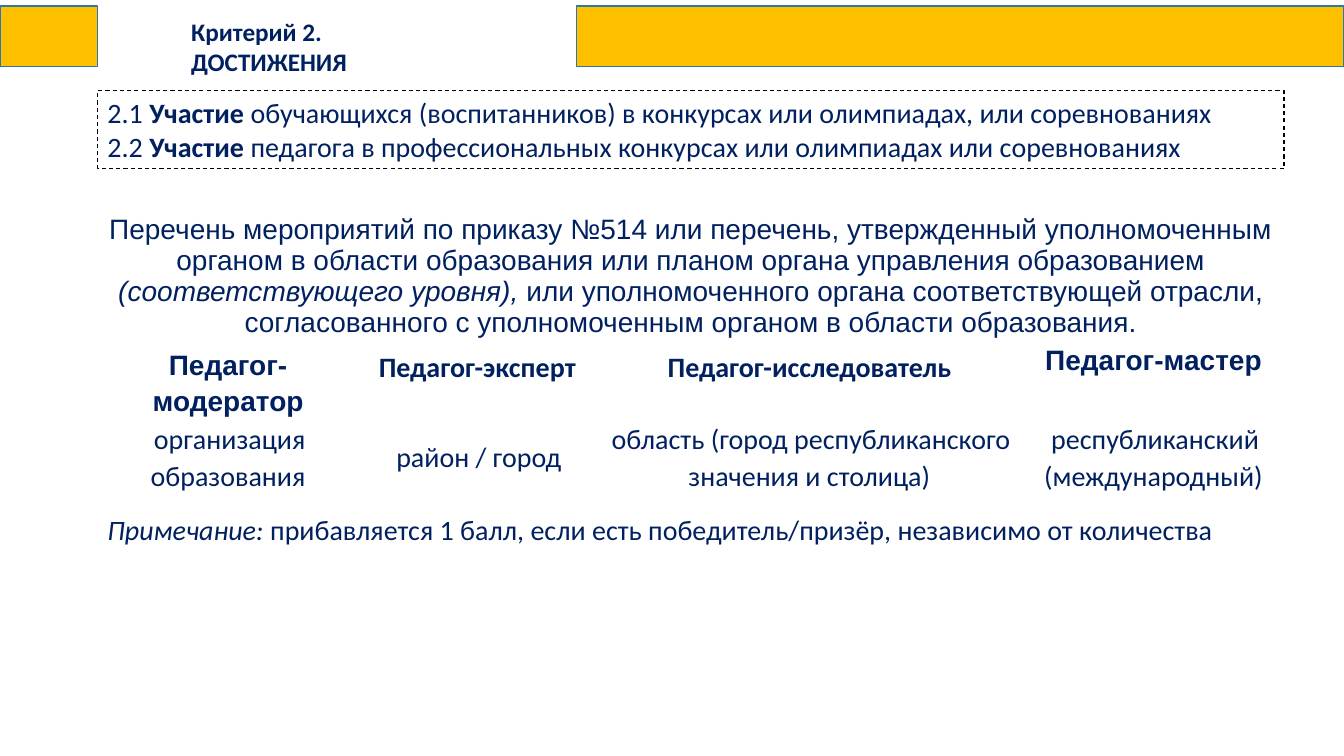
from pptx import Presentation
from pptx.dml.color import RGBColor
from pptx.enum.dml import MSO_LINE as Dash
from pptx.enum.shapes import MSO_SHAPE as Shape
from pptx.enum.text import MSO_ANCHOR as Anchor, MSO_AUTO_SIZE as Auto, PP_ALIGN as Align
from pptx.util import Cm, Pt

NAVY, GOLD, BLUE, BLACK = "002060", "FFC000", "2E75B5", "000000"
WIDE, HIGH = 33.87, 19.05
LEFT, SPAN = 2.46, 29.9
SIDES = ("left", "top", "right", "bottom")


def paint(color, code):
    color.rgb = RGBColor.from_string(code)


def apply(item, form):
    for key, value in form.items():
        setattr(item, key, value)


def write(par, runs, form, **layout):
    """Fill a paragraph with (text, extra font values) runs."""
    apply(par, layout)
    for text, extra in runs:
        run = par.add_run()
        run.text = text
        apply(run.font, {"name": "Calibri", "size": Pt(20), **form, **extra})
        paint(run.font.color, NAVY)


def inset(item, pads):
    apply(item, {f"margin_{side}": Cm(pad) for side, pad in zip(SIDES, pads)})


def add_rect(slide, box, line, width):
    rect = slide.shapes.add_shape(Shape.RECTANGLE, *map(Cm, box))
    rect.shadow.inherit = False
    rect.fill.background()
    paint(rect.line.color, line)
    rect.line.width = Pt(width)
    return rect


def add_text(slide, box, runs, form):
    frame = slide.shapes.add_textbox(*map(Cm, box)).text_frame
    frame.word_wrap = True
    write(frame.paragraphs[0], runs, form)
    return frame


def add_head(slide, box):
    """Title between two gold bars."""
    x, y, w, h = box
    add_text(slide, (x + 4.57, y + 0.13, 7.75, 1.02),
             [("Критерий 2. ДОСТИЖЕНИЯ", {})], {"size": Pt(18), "bold": True})
    for start, end in ((0, LEFT), (14.53, w)):
        bar = add_rect(slide, (x + start, y, end - start, h), BLUE, 1)
        bar.fill.solid()
        paint(bar.fill.fore_color, GOLD)


def add_goals(slide, box):
    rect = add_rect(slide, box, BLACK, 0.75)
    rect.line.dash_style = Dash.DASH
    frame = rect.text_frame
    frame.word_wrap = True
    frame.vertical_anchor = Anchor.TOP
    goals = (
        ("2.1 ", " обучающихся (воспитанников) в конкурсах или олимпиадах, или соревнованиях"),
        ("2.2 ", " педагога в профессиональных конкурсах или олимпиадах или соревнованиях"),
    )
    for i, (mark, rest) in enumerate(goals):
        par = frame.add_paragraph() if i else frame.paragraphs[0]
        write(par, [(mark, {}), ("Участие", {"bold": True}), (rest, {})], {},
              alignment=Align.JUSTIFY)


def add_levels(slide, box):
    """Table of event levels for each teacher grade."""
    grades = (
        ("Педагог-модератор", "Arial", 1.15, "организация образования"),
        ("Педагог-эксперт", "Calibri", 1.15, "район / город"),
        ("Педагог-исследователь", "Calibri", 1.15,
         "область (город республиканского значения и столица)"),
        ("Педагог-мастер", "Arial", None, "республиканский (международный)"),
    )
    table = slide.shapes.add_table(3, len(grades), *map(Cm, box)).table
    table.first_row = table.horz_banding = False
    for col, part in zip(table.columns, (0.22, 0.2, 0.36, 0.22)):
        col.width = Cm(box[2] * part)
    for cell in table.iter_cells():
        cell.fill.background()
        inset(cell, (0.13, 0.08, 0.13, 0.08))

    top = table.cell(0, 0)
    top.merge(table.cell(0, len(grades) - 1))
    write(top.text_frame.paragraphs[0], [
        ("Перечень мероприятий по приказу №514 или перечень, утвержденный "
         "уполномоченным органом в области образования или планом органа "
         "управления образованием ", {}),
        ("(соответствующего уровня),", {"italic": True}),
        (" или уполномоченного органа соответствующей отрасли, согласованного "
         "с уполномоченным органом в области образования.", {}),
    ], {"name": "Arial"}, alignment=Align.CENTER)

    for i, (grade, font, gap, level) in enumerate(grades):
        write(table.cell(1, i).text_frame.paragraphs[0], [(grade, {})],
              {"name": font, "bold": True}, alignment=Align.CENTER, line_spacing=gap)
        cell = table.cell(2, i)
        cell.vertical_anchor = Anchor.MIDDLE
        inset(cell, (0.18, 0, 0.18, 0))
        par = cell.text_frame.paragraphs[0]
        write(par, [(level, {})], {}, alignment=Align.CENTER, line_spacing=1.07)
        par._p.get_or_add_pPr().set("indent", str(Cm(0.08)))


def add_note(slide, box):
    frame = add_text(slide, box, [
        ("Примечание: ", {"italic": True}),
        ("прибавляется 1 балл, если есть победитель/призёр, независимо от количества", {}),
    ], {})
    frame.auto_size = Auto.SHAPE_TO_FIT_TEXT


def main():
    deck = Presentation()
    apply(deck, {"slide_width": Cm(WIDE), "slide_height": Cm(HIGH)})
    slide = deck.slides.add_slide(deck.slide_layouts[6])
    add_goals(slide, (LEFT, 2.29, SPAN, 1.96))
    add_levels(slide, (LEFT, 5.31, SPAN, 2.13))
    add_note(slide, (LEFT, 12.78, SPAN, 1.12))
    add_head(slide, (0, 0.15, WIDE, 1.52))
    deck.save("out.pptx")


if __name__ == "__main__":
    main()
